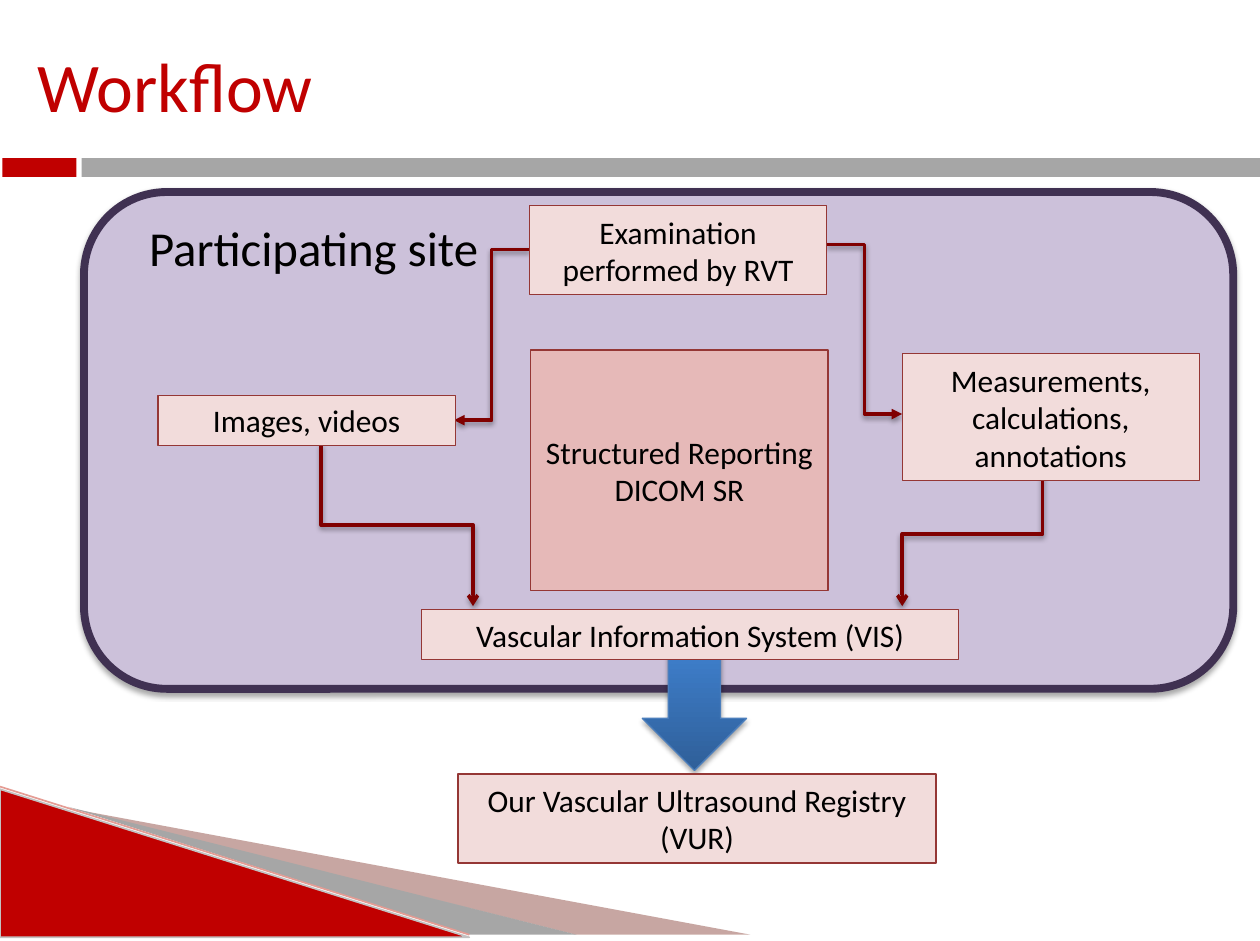
"""Build the Workflow slide: how an ultrasound exam reaches the registry."""
from lxml.etree import SubElement
from pptx import Presentation
from pptx.dml.color import RGBColor
from pptx.enum.shapes import MSO_CONNECTOR as LINK, MSO_SHAPE as SHAPE
from pptx.enum.text import MSO_ANCHOR as ANCHOR, PP_ALIGN as ALIGN
from pptx.oxml.ns import qn
from pptx.util import Pt


class Theme:
    font = "Calibri"
    title_size, site_size, box_size = Pt(40), Pt(28), Pt(18)
    red = RGBColor.from_string("C00000")
    gray = RGBColor.from_string("A6A6A6")
    white = RGBColor.from_string("FFFFFF")
    black = RGBColor.from_string("000000")
    brown = RGBColor.from_string("742217")
    silver = RGBColor.from_string("C3C1C1")
    salmon = RGBColor.from_string("E59C94")
    lilac = RGBColor.from_string("CCC1DA")
    purple = RGBColor.from_string("403152")
    pink = RGBColor.from_string("F2DCDB")
    rose = RGBColor.from_string("E6B9B8")
    box_edge = RGBColor.from_string("953735")
    maroon = RGBColor.from_string("800000")
    blue_edge = RGBColor.from_string("4B7EBC")
    blue_stops = (0, RGBColor.from_string("2F5F99")), (0.8, RGBColor.from_string("3D7CC7"))


def paint(shape, fill, edge=None, width=0.75):
    """Give a shape a flat fill and an optional outline, without a shadow."""
    shape.shadow.inherit = False
    shape.fill.solid()
    shape.fill.fore_color.rgb = fill
    if edge is None:
        shape.line.fill.background()
    else:
        shape.line.color.rgb = edge
        shape.line.width = Pt(width)


def cast_shadow(shape, opacity, distance):
    """Add a soft shadow that falls straight down."""
    properties = shape._element.spPr
    effects = properties.find(qn("a:effectLst"))
    if effects is None:
        effects = SubElement(properties, qn("a:effectLst"))
    shadow = SubElement(effects, qn("a:outerShdw"), blurRad=str(Pt(3.1)),
                        dist=str(Pt(distance)), dir="5400000", rotWithShape="0")
    color = SubElement(shadow, qn("a:srgbClr"), val=str(Theme.black))
    SubElement(color, qn("a:alpha"), val=str(opacity * 1000))


prs = Presentation()
prs.slide_width, prs.slide_height = Pt(723), Pt(540)
slide = prs.slides.add_slide(prs.slide_layouts[5])
shapes = slide.shapes

title = shapes.title
title.left, title.top, title.width, title.height = Pt(0), Pt(13.7), Pt(530), Pt(70)
title.text_frame.text = "Workflow"
title.text_frame.vertical_anchor = ANCHOR.MIDDLE
heading = title.text_frame.paragraphs[0]
heading.alignment = ALIGN.LEFT
heading._p.get_or_add_pPr().set("marL", str(Pt(14.4)))
heading.font.name, heading.font.size = Theme.font, Theme.title_size
heading.font.color.rgb = Theme.red

wedges = [
    (Theme.brown, 40, [(40.3, 464), (430.6, 536.4), (330.5, 536.4)]),
    (Theme.gray, 100, [(39, 463), (331, 536.4), (269.3, 536.4)]),
]
for color, opacity, (tip, *corners) in wedges:
    outline = shapes.build_freeform(Pt(tip[0]), Pt(tip[1]))
    outline.add_line_segments([(Pt(x), Pt(y)) for x, y in corners])
    wedge = outline.convert_to_shape()
    paint(wedge, color)
    tint = wedge._element.spPr.find(qn("a:solidFill"))[0]
    SubElement(tint, qn("a:alpha"), val=str(opacity * 1000))

corner = shapes.add_shape(SHAPE.RIGHT_TRIANGLE, Pt(0), Pt(452.9), Pt(269.3), Pt(85))
paint(corner, Theme.red, Theme.silver, 1)
corner_edge = shapes.add_connector(LINK.STRAIGHT, Pt(0), Pt(451.4), Pt(269.3), Pt(536.4))
corner_edge.line.color.rgb = Theme.salmon
corner_edge.line.width = Pt(0.95)
SubElement(corner_edge._element.spPr, qn("a:effectLst"))

bands = [
    (0, 90, 723, 12.2, Theme.white),
    (1.4, 90.7, 42.5, 10.8, Theme.red),
    (46.8, 90.7, 676.2, 10.8, Theme.gray),
]
for x, y, width, height, color in bands:
    band = shapes.add_shape(SHAPE.RECTANGLE, Pt(x), Pt(y), Pt(width), Pt(height))
    paint(band, color)

site = shapes.add_shape(SHAPE.ROUNDED_RECTANGLE, Pt(48.2), Pt(110.2), Pt(659.5), Pt(285.1))
paint(site, Theme.lilac, Theme.purple, 4.5)
cast_shadow(site, 35, 1.8)

export = shapes.add_shape(SHAPE.DOWN_ARROW, Pt(368.6), Pt(362.2), Pt(59.8), Pt(79.9))
paint(export, Theme.blue_edge, Theme.blue_edge)
export.fill.gradient()
export.fill.gradient_angle = 90
for stop, (position, color) in zip(export.fill.gradient_stops, Theme.blue_stops):
    stop.position = position
    stop.color.rgb = color
cast_shadow(export, 35, 1.8)

flows = [
    ((598.3, 265), (517.7, 347.8), True, "arrow"),
    ((184.3, 254.9), (271.4, 347.8), True, "arrow"),
    ((303.8, 143.3), (260.6, 241.2), False, "triangle"),
    ((474.5, 140.4), (517.7, 237.6), False, "triangle"),
]
for (x1, y1), (x2, y2), downward, head in flows:
    half_x, half_y = (x2 - x1) / 2, (y2 - y1) / 2
    center_x, center_y = x1 + half_x, y1 + half_y
    turn = -1 if half_x > 0 else 1
    if downward:
        half_x, half_y = turn * half_y, -turn * half_x
    flow = shapes.add_connector(LINK.ELBOW, Pt(center_x - half_x), Pt(center_y - half_y),
                                Pt(center_x + half_x), Pt(center_y + half_y))
    if downward:
        flow._element.spPr.xfrm.set("rot", str(turn * 90 % 360 * 60000))
    flow.line.color.rgb = Theme.maroon
    flow.line.width = Pt(2)
    SubElement(flow.line._get_or_add_ln(), qn("a:tailEnd"), type=head)
    cast_shadow(flow, 38, 1.6)

steps = [
    ("Measurements, calculations, annotations", 517.7, 203, 170.6, 72.7, Theme.pink),
    ("Examination performed by RVT", 303.8, 118.1, 170.6, 51.1, Theme.pink),
    ("Structured Reporting\vDICOM SR", 304.6, 200.9, 170.6, 138.2, Theme.rose),
    ("Vascular Information System (VIS)", 241.9, 349.9, 308.2, 28.8, Theme.pink),
    ("Our Vascular Ultrasound Registry (VUR)", 262.8, 444.2, 274.3, 51.1, Theme.pink),
    ("Images, videos", 90.7, 226.8, 170.6, 28.8, Theme.pink),
]
for text, x, y, width, height, color in steps:
    step = shapes.add_shape(SHAPE.RECTANGLE, Pt(x), Pt(y), Pt(width), Pt(height))
    paint(step, color, Theme.box_edge)
    step.text_frame.word_wrap = True
    step.text_frame.vertical_anchor = ANCHOR.MIDDLE
    step.text_frame.text = text
    label = step.text_frame.paragraphs[0]
    label.alignment = ALIGN.CENTER
    label.font.name, label.font.size = Theme.font, Theme.box_size
    label.font.color.rgb = Theme.black

site_name = shapes.add_textbox(Pt(78.5), Pt(121.7), Pt(206.6), Pt(41)).text_frame
site_name.text = "Participating site"
site_label = site_name.paragraphs[0]
site_label.font.name, site_label.font.size = Theme.font, Theme.site_size
site_label.font.color.rgb = Theme.black

prs.save("out.pptx")
